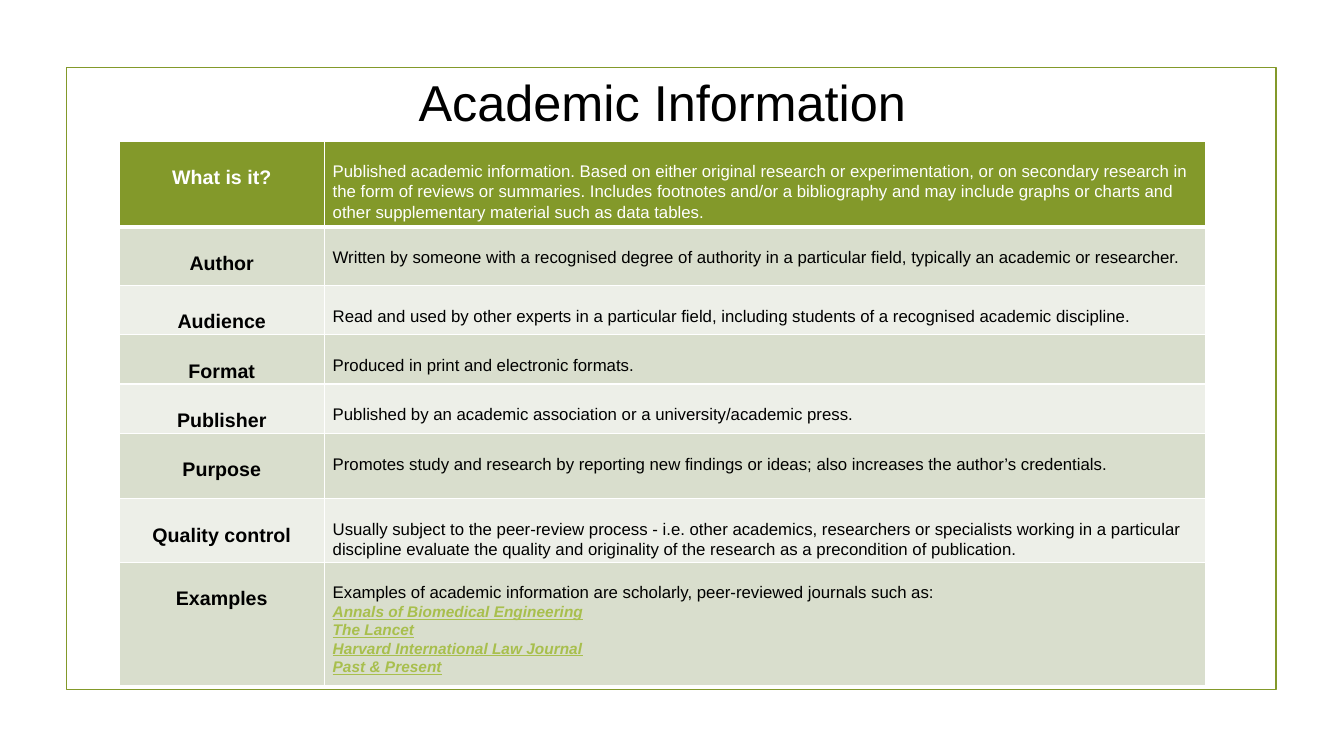
"""Build the Academic Information slide with its framed summary table."""
from lxml.etree import SubElement
from pptx import Presentation
from pptx.dml.color import RGBColor
from pptx.enum.shapes import MSO_SHAPE
from pptx.enum.text import MSO_ANCHOR, PP_ALIGN
from pptx.oxml.ns import qn
from pptx.util import Inches, Pt

COLORS = {
    "olive": "83992A",
    "band_dark": "D9DECD",
    "band_light": "EDEFE8",
    "link": "A8BF4D",
    "white": "FFFFFF",
    "black": "000000",
}
FONT = "Arial"
COLUMN_WIDTHS = [2.04, 8.74]
ROWS = [
    ("What is it?", 0.85, "Published academic information. Based on either original research or "
     "experimentation, or on secondary research in the form of reviews or summaries. Includes "
     "footnotes and/or a bibliography and may include graphs or charts and other supplementary "
     "material such as data tables."),
    ("Author", 0.58, "Written by someone with a recognised degree of authority in a particular "
     "field, typically an academic or researcher."),
    ("Audience", 0.49, "Read and used by other experts in a particular field, including students "
     "of a recognised academic discipline."),
    ("Format", 0.49, "Produced in print and electronic formats."),
    ("Publisher", 0.49, "Published by an academic association or a university/academic press."),
    ("Purpose", 0.65, "Promotes study and research by reporting new findings or ideas; also "
     "increases the author’s credentials."),
    ("Quality control", 0.61, "Usually subject to the peer-review process - i.e. other academics, "
     "researchers or specialists working in a particular discipline evaluate the quality and "
     "originality of the research as a precondition of publication."),
    ("Examples", 1.22, "Examples of academic information are scholarly, peer-reviewed journals "
     "such as:"),
]
JOURNALS = ["Annals of Biomedical Engineering", "The Lancet",
            "Harvard International Law Journal", "Past & Present"]


def rgb(name):
    """Return the named colour."""
    return RGBColor.from_string(COLORS[name])


def write(paragraph, text, size, color, bold=False, align=PP_ALIGN.LEFT, spacing=1.0):
    """Fill a paragraph with text in one style."""
    paragraph.text = text
    paragraph.alignment = align
    paragraph.line_spacing = spacing
    paragraph.font.name = FONT
    paragraph.font.size = Pt(size)
    paragraph.font.bold = bold
    paragraph.font.color.rgb = rgb(color)


def add_frame(slide):
    """Draw the outline around the slide content."""
    frame = slide.shapes.add_shape(
        MSO_SHAPE.RECTANGLE, Inches(0.66), Inches(0.67), Inches(12), Inches(6.17))
    frame.shadow.inherit = False
    frame.fill.background()
    frame.line.color.rgb = rgb("olive")
    frame.line.width = Pt(1.25)


def add_title(slide, text):
    """Add the centred slide title."""
    box = slide.shapes.add_textbox(Inches(1.32), Inches(0.6), Inches(10.5), Inches(0.82))
    box.text_frame.word_wrap = True
    box.text_frame.vertical_anchor = MSO_ANCHOR.MIDDLE
    write(box.text_frame.paragraphs[0], text, 36, "black", align=PP_ALIGN.CENTER)


def set_borders(cell, top, bottom):
    """Give a cell white borders with the given top and bottom widths."""
    properties = cell._tc.get_or_add_tcPr()
    for side, width in (("L", 1), ("R", 1), ("T", top), ("B", bottom)):
        line = SubElement(properties, qn(f"a:ln{side}"), w=str(Pt(width)))
        fill = SubElement(line, qn("a:solidFill"))
        SubElement(fill, qn("a:srgbClr"), val=COLORS["white"])


def style_cell(cell, row_index, top_margin):
    """Set the borders, fill and margins of a cell."""
    set_borders(cell, 3 if row_index == 1 else 1, 3 if row_index == 0 else 1)
    band = "band_dark" if row_index % 2 else "band_light"
    cell.fill.solid()
    cell.fill.fore_color.rgb = rgb(band if row_index else "olive")
    cell.margin_left = cell.margin_right = Inches(0.08)
    cell.margin_top = Inches(top_margin)
    cell.margin_bottom = 0


def add_journals(cell):
    """List the example journals below the text of a cell."""
    for journal in JOURNALS:
        paragraph = cell.text_frame.add_paragraph()
        write(paragraph, journal, 11, "link", bold=True, spacing=1.07)
        paragraph.font.italic = True
        paragraph.font.underline = True


def add_summary_table(slide):
    """Add the table of labels and descriptions."""
    table = slide.shapes.add_table(
        len(ROWS), len(COLUMN_WIDTHS), Inches(1.18), Inches(1.4),
        Inches(sum(COLUMN_WIDTHS)), Inches(sum(height for _, height, _ in ROWS))).table
    for column, width in zip(table.columns, COLUMN_WIDTHS):
        column.width = Inches(width)
    for index, (label, height, description) in enumerate(ROWS):
        table.rows[index].height = Inches(height)
        label_cell, text_cell = table.cell(index, 0), table.cell(index, 1)
        style_cell(label_cell, index, 0.24)
        style_cell(text_cell, index, 0.2)
        color = "black" if index else "white"
        write(label_cell.text_frame.paragraphs[0], label, 14, color, True, PP_ALIGN.CENTER, 1.07)
        write(text_cell.text_frame.paragraphs[0], description, 12, color, spacing=1.07)
    add_journals(table.cell(len(ROWS) - 1, 1))


def main():
    """Build and save the presentation."""
    presentation = Presentation()
    presentation.slide_width = Inches(13.33)
    presentation.slide_height = Inches(7.5)
    slide = presentation.slides.add_slide(presentation.slide_layouts[6])
    add_frame(slide)
    add_title(slide, "Academic Information")
    add_summary_table(slide)
    presentation.save("out.pptx")


if __name__ == "__main__":
    main()
